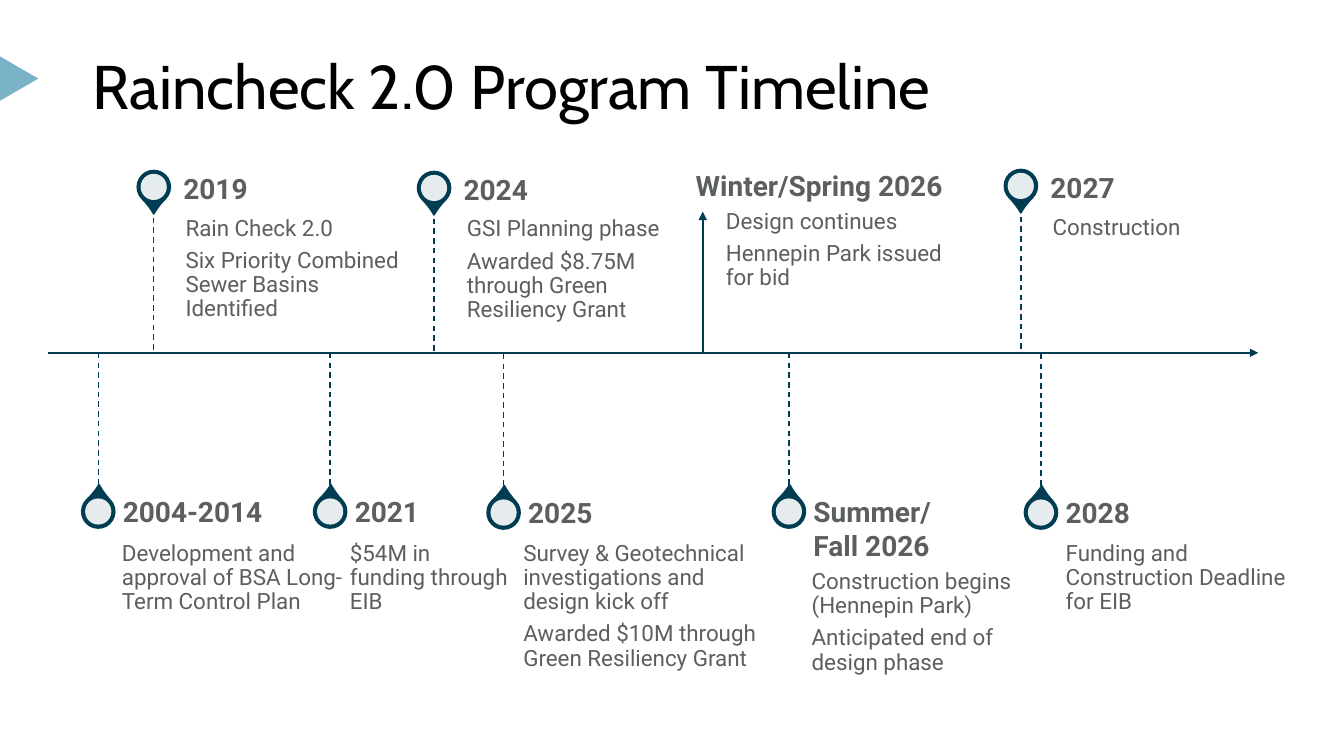
from lxml import etree
from pptx import Presentation
from pptx.dml.color import RGBColor
from pptx.enum.dml import MSO_LINE
from pptx.enum.shapes import MSO_CONNECTOR, MSO_SHAPE
from pptx.enum.text import MSO_ANCHOR, MSO_AUTO_SIZE
from pptx.oxml.ns import qn
from pptx.util import Inches, Pt

STRAIGHT = MSO_CONNECTOR.STRAIGHT
DASH = MSO_LINE.DASH
TRIANGLE, TEARDROP, OVAL = MSO_SHAPE.ISOSCELES_TRIANGLE, MSO_SHAPE.TEAR, MSO_SHAPE.OVAL
TOP, MIDDLE = MSO_ANCHOR.TOP, MSO_ANCHOR.MIDDLE
GROW, FIXED = MSO_AUTO_SIZE.SHAPE_TO_FIT_TEXT, MSO_AUTO_SIZE.NONE

THEME = {
    "navy": RGBColor.from_string("003D52"),
    "sky": RGBColor.from_string("7AB3C7"),
    "white": RGBColor.from_string("FFFFFF"),
    "title": {"name": "Cabin", "size": Pt(44), "bold": False,
              "color": RGBColor.from_string("000000")},
    "heading": {"name": "Roboto", "size": Pt(20), "bold": True,
                "color": RGBColor.from_string("5C5F61")},
    "body": {"name": "Roboto", "size": Pt(16), "bold": False,
             "color": RGBColor.from_string("5C5F61")},
}

TITLE = "Raincheck 2.0 Program Timeline"
AXIS = (0.48, 3.5, 12.48, 3.5)
PIN_SIZE, DOT_SIZE = 0.33, 0.26
BODY_INSETS = (0, 0.1, 0.1, 0.15)
HEADING_INSETS = (0.1, 0.05, 0.1, 0.05)

UPPER = {"rotation": 135.2, "stem": (0.47, 1.8), "heading": (0.36, -0.04)}
LOWER = {"rotation": 316.7, "stem": (-1.41, -0.08), "heading": (0.31, -0.05)}

# side, pin (left, top), heading, heading (width, height), body box, body lines
MILESTONES = [
    (LOWER, (0.81, 4.91), "2004-2014", (1.8, 0.44), (1.21, 5.28, 2.29, 1.17),
     ["Development and approval of BSA Long-Term Control Plan"]),
    (UPPER, (1.36, 1.69), "2019", (0.86, 0.44), (1.84, 2.05, 2.29, 0.9),
     ["Rain Check 2.0", "Six Priority Combined Sewer Basins Identified"]),
    (LOWER, (3.11, 4.91), "2021", (1.58, 0.44), (3.47, 5.28, 1.68, 0.9),
     ["$54M in funding through EIB"]),
    (UPPER, (4.14, 1.7), "2024", (0.86, 0.44), (4.63, 2.06, 2.29, 0.9),
     ["GSI Planning phase", "Awarded $8.75M through Green Resiliency Grant"]),
    (LOWER, (4.83, 4.92), "2025", (1.58, 0.44), (5.19, 5.28, 2.52, 0.9),
     ["Survey & Geotechnical investigations and design kick off",
      "Awarded $10M through Green Resiliency Grant"]),
    (LOWER, (7.66, 4.91), "Summer/ Fall 2026", (1.83, 0.77), (8.05, 5.56, 2.18, 0.9),
     ["Construction begins (Hennepin Park)", "Anticipated end of design phase"]),
    (UPPER, (9.96, 1.68), "2027", (0.86, 0.44), (10.44, 2.04, 2.29, 0.9),
     ["Construction"]),
    (LOWER, (10.16, 4.92), "2028", (1.58, 0.44), (10.57, 5.28, 2.29, 0.76),
     ["Funding and Construction Deadline for EIB"]),
]

DESIGN_PHASE = {
    "arrow": (6.97, 3.5, 6.97, 2.1),
    "box": (6.9, 1.61, 2.8, 0.9),
    "lines": [("Winter/Spring 2026", "heading", 0),
              ("Design continues", "body", 0.3),
              ("Hennepin Park issued for bid", "body", 0.3)],
}


def add_text(slide, box, lines, insets, spacing=0.9, after=5.6, anchor=TOP, fit=FIXED):
    frame = slide.shapes.add_textbox(*map(Inches, box)).text_frame
    left, top, right, bottom = map(Inches, insets)
    settings = {"word_wrap": True, "auto_size": fit, "vertical_anchor": anchor,
                "margin_left": left, "margin_top": top,
                "margin_right": right, "margin_bottom": bottom}
    for name, value in settings.items():
        setattr(frame, name, value)
    for index, (text, style, indent) in enumerate(lines):
        paragraph = frame.add_paragraph() if index else frame.paragraphs[0]
        paragraph.line_spacing = spacing
        paragraph.space_after = Pt(after)
        if indent:
            paragraph._p.get_or_add_pPr().set("marL", str(Inches(indent)))
        run = paragraph.add_run()
        run.text = text
        for name, value in THEME[style].items():
            if name == "color":
                run.font.color.rgb = value
            else:
                setattr(run.font, name, value)


def add_figure(slide, kind, box, fill, rotation, outline=None, opacity=None):
    shape = slide.shapes.add_shape(kind, *map(Inches, box))
    shape.shadow.inherit = False
    shape.rotation = rotation
    shape.fill.solid()
    shape.fill.fore_color.rgb = fill
    if outline:
        shape.line.color.rgb = outline
        shape.line.width = Pt(1)
    else:
        shape.line.fill.background()
    if opacity:
        color = shape._element.spPr.find(qn("a:solidFill"))[0]
        etree.SubElement(color, qn("a:alpha"), val=str(opacity * 1000))
    return shape


def add_line(slide, ends, width, dash=None, arrow=False):
    connector = slide.shapes.add_connector(STRAIGHT, *map(Inches, ends))
    connector.line.color.rgb = THEME["navy"]
    connector.line.width = Pt(width)
    if dash:
        connector.line.dash_style = dash
    if arrow:
        etree.SubElement(connector.line._get_or_add_ln(), qn("a:tailEnd"), type="triangle")
    etree.SubElement(connector._element.spPr, qn("a:effectLst"))


def add_milestone(slide, side, pin, heading, heading_size, body_box, body):
    left, top = pin
    center = left + PIN_SIZE / 2
    start, end = side["stem"]
    add_line(slide, (center, top + start, center, top + end), 1, dash=DASH)
    drop = add_figure(slide, TEARDROP, (left, top, PIN_SIZE, PIN_SIZE),
                      THEME["navy"], side["rotation"], outline=THEME["navy"])
    drop.adjustments[0] = 1.15
    inset = (PIN_SIZE - DOT_SIZE) / 2
    add_figure(slide, OVAL, (left + inset, top + inset, DOT_SIZE, DOT_SIZE),
               THEME["white"], 0, opacity=90)
    across, down = side["heading"]
    add_text(slide, (left + across, top + down, *heading_size),
             [(heading, "heading", 0)], HEADING_INSETS, spacing=1.0, after=0, fit=GROW)
    add_text(slide, body_box, [(line, "body", 0) for line in body], BODY_INSETS)


def main():
    presentation = Presentation()
    presentation.slide_width, presentation.slide_height = Inches(13.33), Inches(7.5)
    slide = presentation.slides.add_slide(presentation.slide_layouts[6])
    add_figure(slide, TRIANGLE, (-0.03, 0.59, 0.44, 0.38), THEME["sky"], 90)
    add_text(slide, (0.92, 0.54, 11.5, 0.7), [(TITLE, "title", 0)], (0, 0, 0, 0),
             after=0, anchor=MIDDLE)
    add_line(slide, AXIS, 1.5, arrow=True)
    for milestone in MILESTONES:
        add_milestone(slide, *milestone)
    add_line(slide, DESIGN_PHASE["arrow"], 1.5, arrow=True)
    add_text(slide, DESIGN_PHASE["box"], DESIGN_PHASE["lines"], BODY_INSETS)
    presentation.save("out.pptx")


if __name__ == "__main__":
    main()
